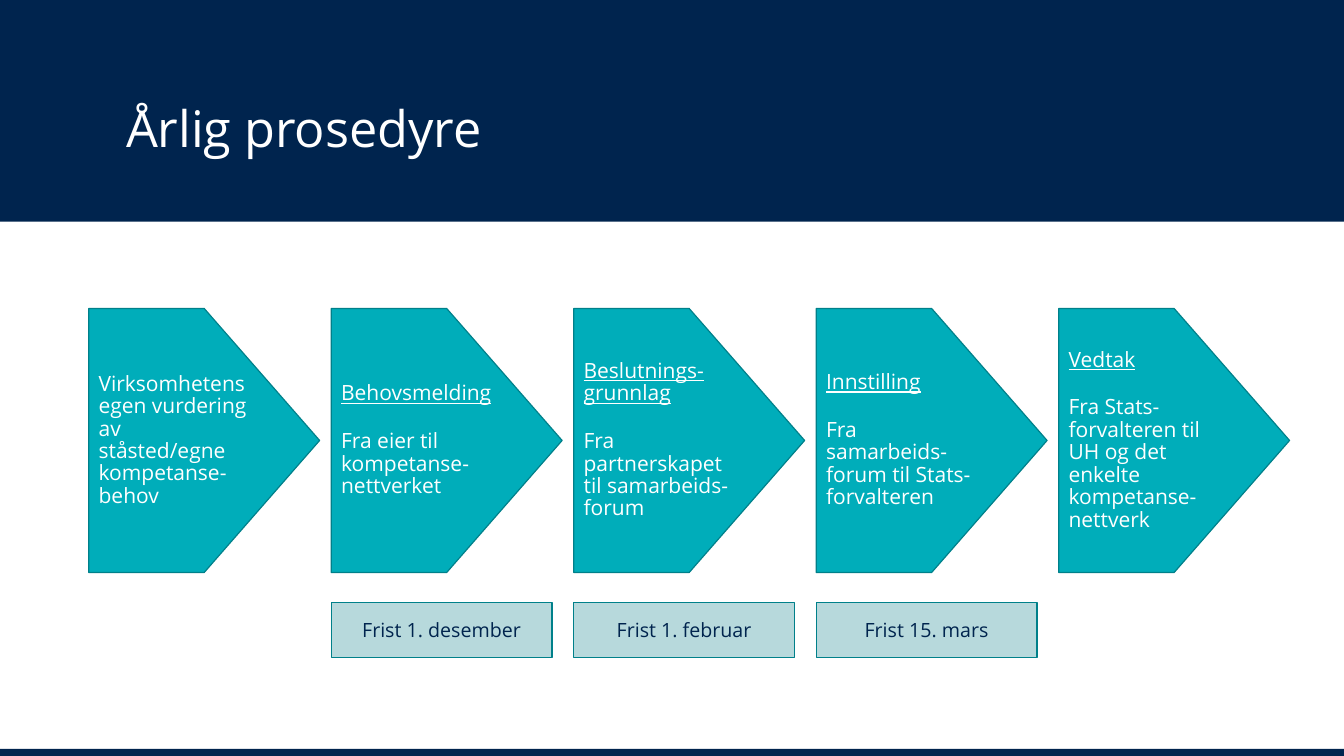
from dataclasses import dataclass

from pptx import Presentation
from pptx.dml.color import RGBColor
from pptx.enum.shapes import MSO_SHAPE as Shape
from pptx.enum.text import MSO_ANCHOR as Anchor, MSO_AUTO_SIZE as AutoSize, PP_ALIGN as Align
from pptx.util import Inches, Pt

TITLE = "Årlig prosedyre"
STEPS = [
    ("", "Virksomhetens egen vurdering av ståsted/egne kompetanse-behov", ""),
    ("Behovsmelding", "Fra eier til kompetanse-nettverket", "Frist 1. desember"),
    ("Beslutnings-grunnlag", "Fra partnerskapet til samarbeids-forum", "Frist 1. februar"),
    ("Innstilling", "Fra samarbeids-forum til Stats-forvalteren", "Frist 15. mars"),
    ("Vedtak", "Fra Stats-forvalteren til UH og det enkelte kompetanse-nettverk", ""),
]


@dataclass(frozen=True)
class Theme:
    font: str = "Open Sans"
    navy: RGBColor = RGBColor.from_string("00244E")
    teal: RGBColor = RGBColor.from_string("00ADBA")
    edge: RGBColor = RGBColor.from_string("00808A")
    pale: RGBColor = RGBColor.from_string("B7D9DC")
    white: RGBColor = RGBColor.from_string("FFFFFF")
    title_size: Pt = Pt(36)
    step_size: Pt = Pt(15)
    deadline_size: Pt = Pt(14)
    edge_width: Pt = Pt(0.85)


THEME = Theme()
SLIDE_WIDTH, SLIDE_HEIGHT = 13.33, 7.5
HEADER_HEIGHT, FOOTER_HEIGHT = 2.2, 0.07
FIRST_LEFT, LAST_LEFT = 0.88, 10.5
PITCH = (LAST_LEFT - FIRST_LEFT) / (len(STEPS) - 1)
STEP_TOP, STEP_WIDTH, STEP_HEIGHT = 3.06, 2.29, 2.62
DEADLINE_TOP, DEADLINE_WIDTH, DEADLINE_HEIGHT = 5.98, 2.19, 0.54


def add_box(page, kind, left, top, width, height, fill, edge=None):
    box = page.shapes.add_shape(kind, Inches(left), Inches(top), Inches(width), Inches(height))
    box.shadow.inherit = False
    box.fill.solid()
    box.fill.fore_color.rgb = fill
    if edge is None:
        box.line.fill.background()
    else:
        box.line.color.rgb = edge
        box.line.width = THEME.edge_width
    box.text_frame.vertical_anchor = Anchor.MIDDLE
    return box


def write(para, text, size, color, align=Align.LEFT, underline=False):
    para.text = text
    para.alignment = align
    para.font.name = THEME.font
    para.font.size = size
    para.font.color.rgb = color
    para.font.underline = underline


def add_bands(page):
    bands = [(0, HEADER_HEIGHT), (SLIDE_HEIGHT - FOOTER_HEIGHT, FOOTER_HEIGHT)]
    for top, height in bands:
        add_box(page, Shape.RECTANGLE, 0, top, SLIDE_WIDTH, height, THEME.navy)


def add_title(page):
    title = page.shapes.title
    page.shapes._spTree.append(title._element)
    title.left, title.top = Inches(1.15), Inches(0.38)
    title.width, title.height = Inches(11.02), Inches(1.18)
    frame = title.text_frame
    frame.auto_size = AutoSize.NONE
    frame.vertical_anchor = Anchor.BOTTOM
    frame.margin_bottom = 0
    write(frame.paragraphs[0], TITLE, THEME.title_size, THEME.white)


def add_step(page, left, heading, body):
    box = add_box(page, Shape.PENTAGON, left, STEP_TOP, STEP_WIDTH, STEP_HEIGHT,
                  THEME.teal, THEME.edge)
    frame = box.text_frame
    para = frame.paragraphs[0]
    if heading:
        write(para, heading, THEME.step_size, THEME.white, underline=True)
        para.line_spacing = 0.89
        para = frame.add_paragraph()
        para.space_before = Pt(18)
    write(para, body, THEME.step_size, THEME.white)
    para.line_spacing = 0.89


def add_deadline(page, left, text):
    box = add_box(page, Shape.FLOWCHART_PROCESS, left, DEADLINE_TOP, DEADLINE_WIDTH,
                  DEADLINE_HEIGHT, THEME.pale, THEME.edge)
    write(box.text_frame.paragraphs[0], text, THEME.deadline_size, THEME.navy, Align.CENTER)


def main():
    deck = Presentation()
    deck.slide_width, deck.slide_height = Inches(SLIDE_WIDTH), Inches(SLIDE_HEIGHT)
    page = deck.slides.add_slide(deck.slide_layouts[5])
    add_bands(page)
    add_title(page)
    for index, (heading, body, deadline) in enumerate(STEPS):
        left = FIRST_LEFT + index * PITCH
        add_step(page, left, heading, body)
        if deadline:
            add_deadline(page, left, deadline)
    deck.save("out.pptx")


if __name__ == "__main__":
    main()
